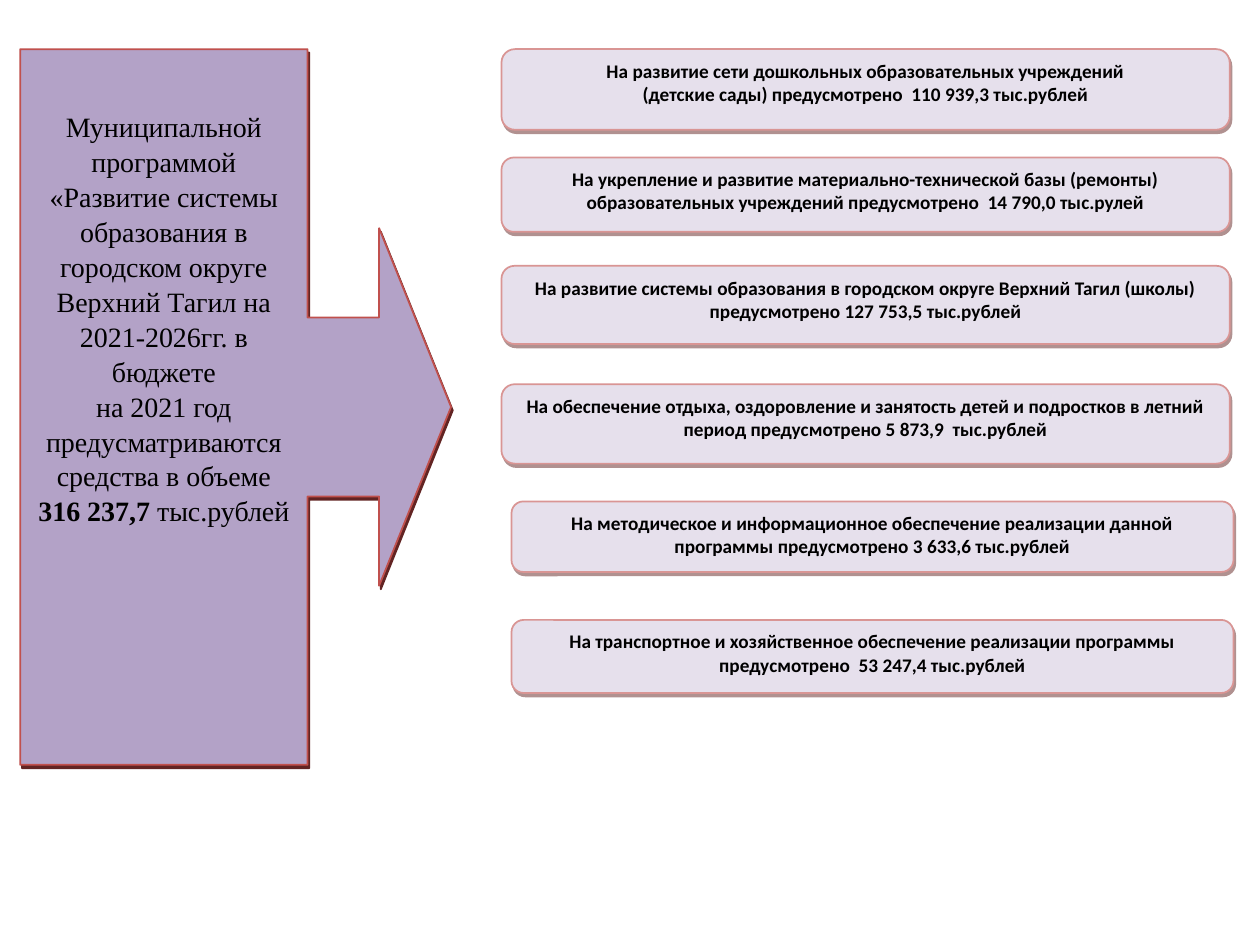
"""Build a slide splitting the education programme budget into six spending lines."""
from lxml import etree
from pptx import Presentation
from pptx import util as u
from pptx.dml.color import RGBColor
from pptx.enum import shapes, text
from pptx.oxml import ns

THEME = {
    "callout_fill": "B3A2C7", "callout_line": "C0504D",
    "card_fill": "E6E0EC", "card_line": "D99594",
    "shadow": "622423", "ink": "000000",
    "callout_font": "Times New Roman", "callout_size": 16,
    "card_font": "Calibri", "card_size": 11,
}


def add_panel(page, preset, place, role, shadow_alpha):
    panel = page.shapes.add_shape(preset, *[u.Inches(length) for length in place])
    panel.fill.solid()
    panel.fill.fore_color.rgb = RGBColor.from_string(THEME[role + "_fill"])
    panel.line.color.rgb = RGBColor.from_string(THEME[role + "_line"])
    panel.line.width = u.Pt(1)
    panel.shadow.inherit = False
    effects = panel._element.spPr.find(ns.qn("a:effectLst"))
    shadow = etree.SubElement(effects, ns.qn("a:outerShdw"), blurRad="0",
                              dist=str(u.Pt(2.2)), dir=str(63 * 60000),
                              algn="ctr", rotWithShape="0")
    color = etree.SubElement(shadow, ns.qn("a:srgbClr"), val=THEME["shadow"])
    etree.SubElement(color, ns.qn("a:alpha"), val=str(shadow_alpha * 1000))
    panel.text_frame.word_wrap = True
    panel.text_frame.vertical_anchor = text.MSO_ANCHOR.TOP
    return panel


def format_paragraphs(panel, role):
    for para in panel.text_frame.paragraphs:
        para.alignment = text.PP_ALIGN.CENTER
        para.font.name = THEME[role + "_font"]
        para.font.size = u.Pt(THEME[role + "_size"])
        para.font.color.rgb = RGBColor.from_string(THEME["ink"])
        para.font.bold = role == "card"


deck = Presentation()
deck.slide_width, deck.slide_height = u.Inches(10), u.Inches(7.5)
page = deck.slides.add_slide(deck.slide_layouts[6])

callout = add_panel(page, shapes.MSO_SHAPE.RIGHT_ARROW_CALLOUT,
                    (0.16, 0.39, 3.42, 5.68), "callout", 100)
for index, value in enumerate((0.415, 0.415, 0.167, 0.667)):
    callout.adjustments[index] = value
frame = callout.text_frame
frame.margin_top = u.Inches(0.47)
frame.text = (
    "Муниципальной программой «Развитие системы образования в городском округе "
    "Верхний Тагил на 2021-2026гг. в бюджете\n"
    "на 2021 год предусматриваются средства в объеме"
)
total = frame.add_paragraph()
amount = total.add_run()
amount.text = "316 237,7 "
amount.font.bold = True
total.add_run().text = "тыс.рублей"
format_paragraphs(callout, "callout")
for para in frame.paragraphs:
    para.line_spacing = 1.04

WIDE, NARROW = (3.98, 5.78), (4.06, 5.73)
cards = [
    (WIDE, 0.39, 0.64, "На развитие сети дошкольных образовательных учреждений\n"
     "(детские сады) предусмотрено  110 939,3 тыс.рублей"),
    (WIDE, 1.25, 0.59, "На укрепление и развитие материально-технической базы (ремонты) "
     "образовательных учреждений предусмотрено  14 790,0 тыс.рулей"),
    (WIDE, 2.11, 0.62, "На развитие системы образования в городском округе "
     "Верхний Тагил (школы) предусмотрено 127 753,5 тыс.рублей"),
    (WIDE, 3.05, 0.63, "На обеспечение отдыха, оздоровление и занятость детей и подростков "
     "в летний период предусмотрено 5 873,9  тыс.рублей"),
    (NARROW, 3.98, 0.56, "На методическое и информационное обеспечение реализации данной "
     "программы предусмотрено 3 633,6 тыс.рублей"),
    (NARROW, 4.92, 0.58, "На транспортное и хозяйственное обеспечение реализации программы "
     "предусмотрено  53 247,4 тыс.рублей"),
]
for (left, width), top, height, wording in cards:
    card = add_panel(page, shapes.MSO_SHAPE.ROUNDED_RECTANGLE,
                     (left, top, width, height), "card", 50)
    card.text_frame.text = wording
    format_paragraphs(card, "card")

deck.save("out.pptx")
